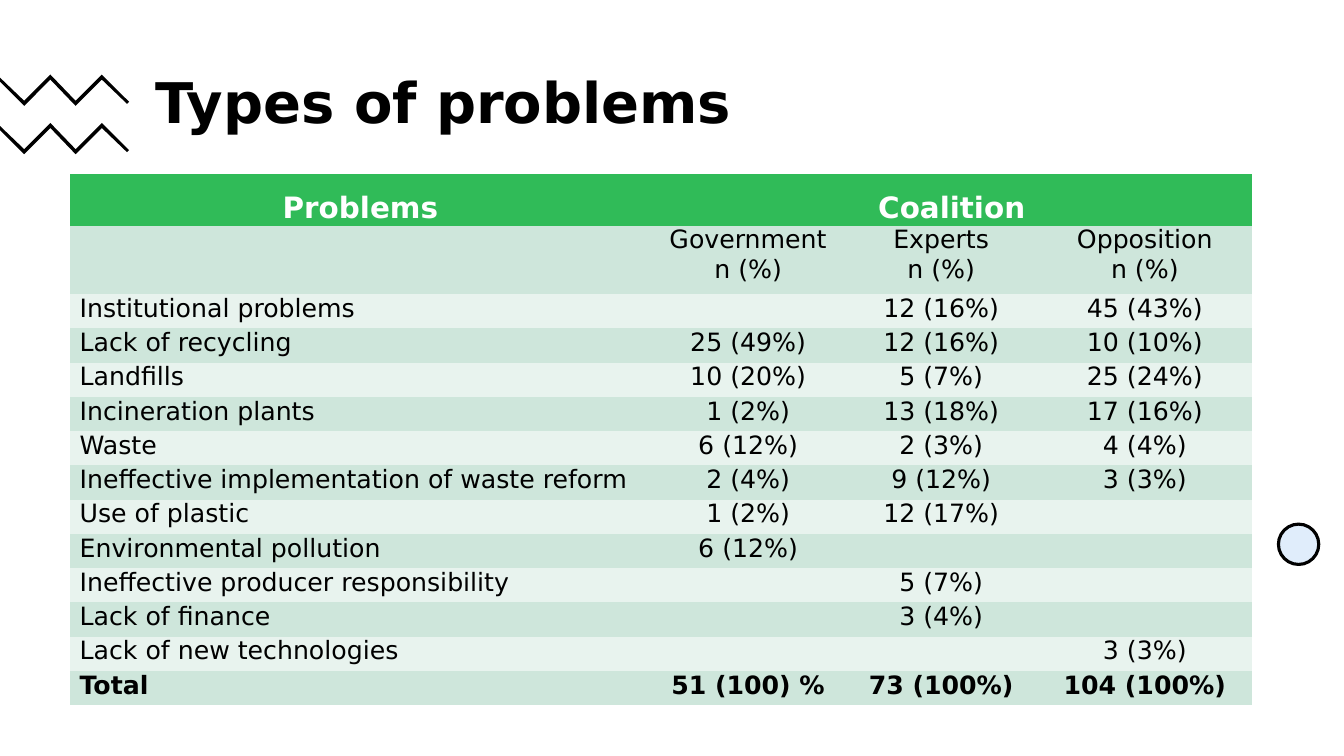
from lxml import etree
from pptx import Presentation
from pptx.dml.color import RGBColor
from pptx.enum.shapes import MSO_SHAPE
from pptx.enum.text import MSO_ANCHOR, PP_ALIGN
from pptx.oxml.ns import qn
from pptx.util import Inches, Pt

BLACK = RGBColor(0x00, 0x00, 0x00)
WHITE = RGBColor(0xFF, 0xFF, 0xFF)
GREEN = RGBColor(0x30, 0xBB, 0x58)
MINT = RGBColor(0xCE, 0xE6, 0xDB)
PALE_MINT = RGBColor(0xE8, 0xF3, 0xEE)
BLUE = RGBColor(0x67, 0xA6, 0xEE)

CENTER, LEFT = PP_ALIGN.CENTER, PP_ALIGN.LEFT
MIDDLE, TOP = MSO_ANCHOR.MIDDLE, MSO_ANCHOR.TOP
OVAL = MSO_SHAPE.OVAL
TITLE_ONLY = 5
NO_STYLE = "{2D5ABB26-0587-4C30-8999-92F81FD0307C}"

COLUMN_WIDTHS = [5.77, 1.92, 1.91, 2.13]
ROW_HEIGHT = 0.34
ROWS = [
    ["Problems", "Coalition", "", ""],
    ["", "Government\nn (%)", "Experts\nn (%)", "Opposition\nn (%)"],
    ["Institutional problems", "", "12 (16%)", "45 (43%)"],
    ["Lack of recycling", "25 (49%)", "12 (16%)", "10 (10%)"],
    ["Landfills", "10 (20%)", "5 (7%)", "25 (24%)"],
    ["Incineration plants", "1 (2%)", "13 (18%)", "17 (16%)"],
    ["Waste", "6 (12%)", "2 (3%)", "4 (4%)"],
    ["Ineffective implementation of waste reform", "2 (4%)", "9 (12%)", "3 (3%)"],
    ["Use of plastic", "1 (2%)", "12 (17%)", ""],
    ["Environmental pollution", "6 (12%)", "", ""],
    ["Ineffective producer responsibility", "", "5 (7%)", ""],
    ["Lack of finance", "", "3 (4%)", ""],
    ["Lack of new technologies", "", "", "3 (3%)"],
    ["Total", "51 (100) %", "73 (100%)", "104 (100%)"],
]
ZIGZAG = [(0.5, 0), (0.75, 0.26), (1.01, 0), (1.28, 0.27), (1.26, 0.29), (1.01, 0.05),
          (0.75, 0.31), (0.5, 0.05), (0.24, 0.31), (0, 0.07), (0, 0.03), (0.24, 0.26)]


class SlideBuilder:
    font_name = "DejaVu Sans"

    def __init__(self, slide):
        self.slide = slide
        slide.background.fill.solid()
        slide.background.fill.fore_color.rgb = WHITE

    def style_text(self, text_frame, size, color, bold, alignment, spacing):
        for paragraph in text_frame.paragraphs:
            paragraph.alignment = alignment
            paragraph.line_spacing = spacing
            for run in paragraph.runs:
                run.font.name = self.font_name
                run.font.size = Pt(size)
                run.font.bold = bold
                run.font.color.rgb = color

    def title(self, text, left, top, width, height):
        shape = self.slide.shapes.title
        shape.left, shape.top = Inches(left), Inches(top)
        shape.width, shape.height = Inches(width), Inches(height)
        shape.text_frame.text = text
        shape.text_frame.vertical_anchor = MIDDLE
        self.style_text(shape.text_frame, 40, BLACK, True, LEFT, 0.9)

    def zigzag(self, top):
        points = [(Inches(x), Inches(top + y)) for x, y in ZIGZAG]
        builder = self.slide.shapes.build_freeform(*points[0])
        builder.add_line_segments(points[1:], close=True)
        shape = builder.convert_to_shape()
        shape.shadow.inherit = False
        shape.fill.solid()
        shape.fill.fore_color.rgb = BLACK
        shape.line.fill.background()

    def circle(self, left, top, diameter, color, opacity):
        shape = self.slide.shapes.add_shape(
            OVAL, Inches(left), Inches(top), Inches(diameter), Inches(diameter))
        shape.shadow.inherit = False
        shape.fill.solid()
        shape.fill.fore_color.rgb = color
        color_element = shape.fill._xPr.find(qn("a:solidFill"))[0]
        etree.SubElement(color_element, qn("a:alpha"), val=str(opacity * 1000))
        shape.line.color.rgb = BLACK
        shape.line.width = Pt(2.25)

    def cell(self, cell, text, fill, size, color, bold, alignment, anchor, spacing):
        cell.fill.solid()
        cell.fill.fore_color.rgb = fill
        cell.margin_left = cell.margin_right = Inches(0.1)
        cell.margin_top = cell.margin_bottom = 0
        cell.vertical_anchor = anchor
        cell.text_frame.text = text
        self.style_text(cell.text_frame, size, color, bold, alignment, spacing)

    def table(self, rows, left, top):
        table = self.slide.shapes.add_table(
            len(rows), len(COLUMN_WIDTHS), Inches(left), Inches(top),
            Inches(sum(COLUMN_WIDTHS)), Inches(ROW_HEIGHT * (len(rows) + 1))).table
        table.horz_banding = False
        table._tbl.tblPr.find(qn("a:tableStyleId")).text = NO_STYLE
        for column, width in zip(table.columns, COLUMN_WIDTHS):
            column.width = Inches(width)
        for row_index, values in enumerate(rows):
            # The subheading row holds two lines
            lines = 2 if row_index == 1 else 1
            table.rows[row_index].height = Inches(ROW_HEIGHT * lines)
            is_total = row_index == len(rows) - 1
            band = MINT if row_index % 2 else PALE_MINT
            for column_index, text in enumerate(values):
                cell = table.cell(row_index, column_index)
                if row_index == 0:
                    self.cell(cell, text, GREEN, 21, WHITE, True, CENTER, MIDDLE, 1.5)
                else:
                    alignment = CENTER if column_index else LEFT
                    self.cell(cell, text, band, 18, BLACK, is_total, alignment, TOP, 1.0)
        table.cell(0, 1).merge(table.cell(0, 3))


def main():
    presentation = Presentation()
    presentation.slide_width = Inches(13.33)
    presentation.slide_height = Inches(7.5)
    layout = presentation.slide_layouts[TITLE_ONLY]
    builder = SlideBuilder(presentation.slides.add_slide(layout))

    # Title
    builder.title("Types of problems", 1.44, 0.43, 10.66, 1.23)

    # Decorations
    for top in (0.74, 1.22):
        builder.zigzag(top)
    builder.circle(12.68, 5.2, 0.4, BLUE, 20)

    # Table of problems by coalition
    builder.table(ROWS, 0.69, 1.73)

    presentation.save("out.pptx")


if __name__ == "__main__":
    main()
